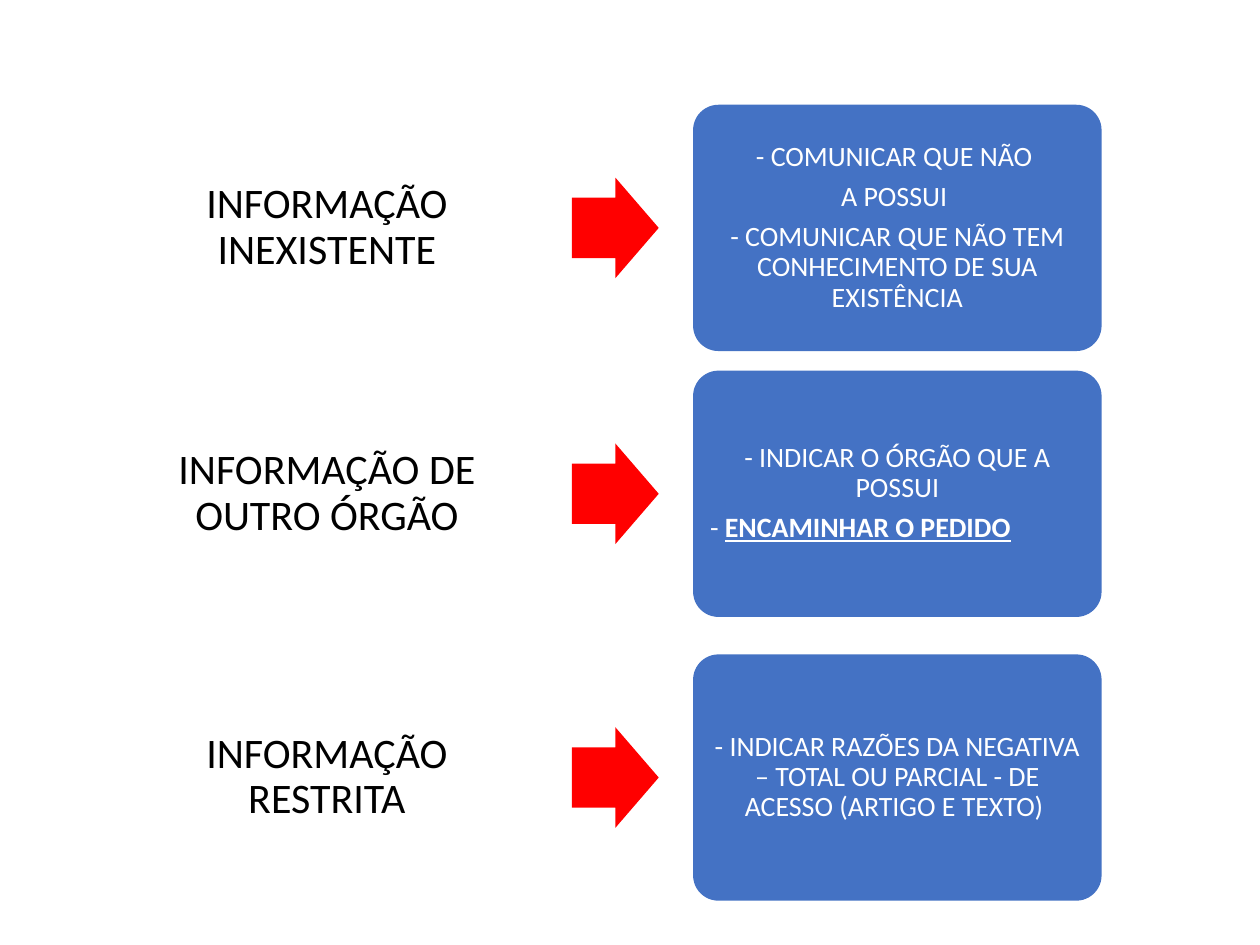
import pptx
import pptx.dml.color
import pptx.enum.shapes
import pptx.enum.text
import pptx.util

Cm = pptx.util.Cm
Pt = pptx.util.Pt
RGB = pptx.dml.color.RGBColor.from_string
SHAPE = pptx.enum.shapes.MSO_SHAPE
ALIGN = pptx.enum.text.PP_ALIGN

COLORS = {"arrow": "FF0000", "answer": "4472C4", "label": "000000", "white": "FFFFFF"}
ROW_LEFT, ROW_HEIGHT, CARD_WIDTH = 2.49, 4.93, 8.2
EMPHASIS = {"bold": True, "underline": True}

ROWS = [
    (2.13, "INFORMAÇÃO INEXISTENTE", [
        (ALIGN.CENTER, [("- COMUNICAR QUE NÃO ", {})]),
        (ALIGN.CENTER, [("A POSSUI ", {})]),
        (ALIGN.CENTER, [("- COMUNICAR QUE NÃO TEM CONHECIMENTO DE SUA EXISTÊNCIA", {})]),
    ]),
    (7.49, "INFORMAÇÃO DE OUTRO ÓRGÃO", [
        (ALIGN.CENTER, [("- INDICAR O ÓRGÃO QUE A POSSUI", {})]),
        (ALIGN.JUSTIFY, [("- ", {}), ("ENCAMINHAR O PEDIDO", EMPHASIS)]),
    ]),
    (13.21, "INFORMAÇÃO RESTRITA", [
        (ALIGN.CENTER, [("- INDICAR RAZÕES DA NEGATIVA – TOTAL OU PARCIAL - DE "
                         "ACESSO (ARTIGO E TEXTO) ", {})]),
    ]),
]


def set_attributes(obj, values):
    """Set each named attribute of an object."""
    for name, value in values.items():
        setattr(obj, name, value)


def write_text(sp, paragraphs, size, color, margin):
    """Fill a shape with formatted paragraphs, centred vertically."""
    tf = sp.text_frame
    set_attributes(tf, {"word_wrap": True,
                        "vertical_anchor": pptx.enum.text.MSO_ANCHOR.MIDDLE,
                        "margin_left": Cm(margin), "margin_right": Cm(margin),
                        "margin_top": Cm(margin), "margin_bottom": Cm(margin)})
    for i, (alignment, runs) in enumerate(paragraphs):
        p = tf.add_paragraph() if i else tf.paragraphs[0]
        set_attributes(p, {"alignment": alignment, "line_spacing": 0.9,
                           "space_after": Pt(size * 0.35)})
        for text, style in runs:
            r = p.add_run()
            r.text = text
            set_attributes(r.font, {"name": "Calibri", "size": Pt(size), **style})
            r.font.color.rgb = RGB(COLORS[color])


def add_label(s, left, top, width, height, text):
    """Place the situation on the left of a row."""
    sp = s.shapes.add_textbox(Cm(left), Cm(top), Cm(width), Cm(height))
    write_text(sp, [(ALIGN.CENTER, [(text, {})])], 24, "label", 0.38)


def add_filled(s, kind, box, color, adjustments):
    """Place a flat filled shape in a box given in centimetres."""
    sp = s.shapes.add_shape(kind, *map(Cm, box))
    sp.shadow.inherit = False
    sp.fill.solid()
    sp.fill.fore_color.rgb = RGB(COLORS[color])
    sp.line.fill.background()
    for i, value in enumerate(adjustments):
        sp.adjustments[i] = value
    return sp


def add_answer(s, left, top, width, height, paragraphs):
    """Place the rounded card with the procedure to follow."""
    sp = add_filled(s, SHAPE.ROUNDED_RECTANGLE, (left, top, width, height), "answer", [0.1])
    sp.line.color.rgb = RGB(COLORS["answer"])
    sp.line.width = Pt(1)
    write_text(sp, paragraphs, 16, "white", 0.18)


def add_row(s, left, top, label, paragraphs):
    """Place a label, an arrow and an answer card side by side."""
    inset, arrow_w, arrow_h = 0.15, 1.75, 2.03
    add_label(s, left + inset, top + inset, CARD_WIDTH - 2 * inset,
              ROW_HEIGHT - 2 * inset, label)
    add_filled(s, SHAPE.RIGHT_ARROW,
               (left + 9.04, top + (ROW_HEIGHT - arrow_h) / 2, arrow_w, arrow_h),
               "arrow", [0.6, 0.5])
    add_answer(s, left + 11.5, top, CARD_WIDTH, ROW_HEIGHT, paragraphs)


def main():
    """Build the slide and save it."""
    prs = pptx.Presentation()
    set_attributes(prs, {"slide_width": Cm(25.4), "slide_height": Cm(19.05)})
    s = prs.slides.add_slide(prs.slide_layouts[6])
    for top, label, paragraphs in ROWS:
        add_row(s, ROW_LEFT, top, label, paragraphs)
    prs.save("out.pptx")


if __name__ == "__main__":
    main()
